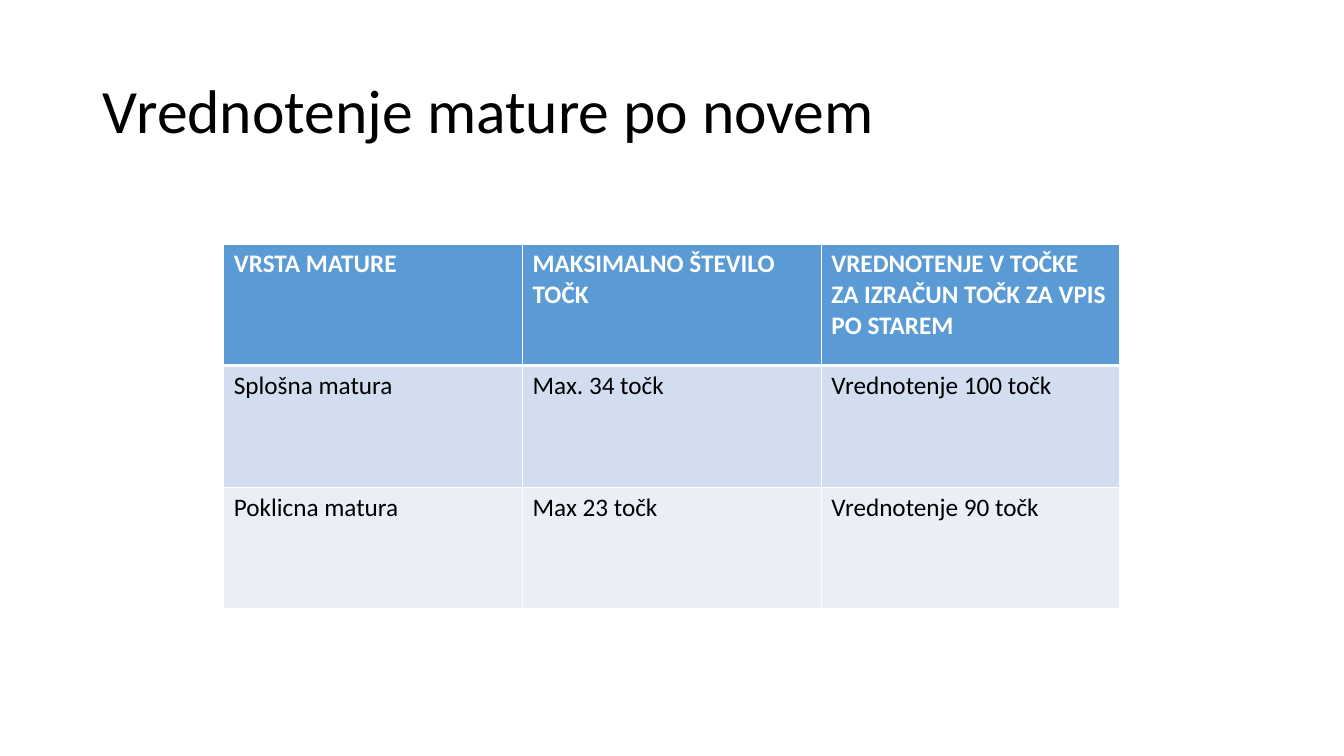
from dataclasses import dataclass

from lxml.etree import SubElement as Sub
from pptx import Presentation
from pptx.dml.color import RGBColor as RGB
from pptx.enum.text import MSO_ANCHOR as Anchor, PP_ALIGN as Align
from pptx.oxml.ns import qn
from pptx.util import Inches, Pt


@dataclass(frozen=True)
class Theme:
    font: str = "Calibri"
    ink: str = "000000"
    white: str = "FFFFFF"
    head: str = "5B9BD5"
    bands: tuple = ("D2DEEF", "EAEFF7")
    title: int = 44
    body: int = 18
    thin: int = 1
    thick: int = 3


THEME = Theme()

ROWS = [
    ("VRSTA MATURE", "MAKSIMALNO ŠTEVILO TOČK",
     "VREDNOTENJE V TOČKE ZA IZRAČUN TOČK ZA VPIS PO STAREM"),
    ("Splošna matura", "Max. 34 točk", "Vrednotenje 100 točk"),
    ("Poklicna matura", "Max 23 točk", "Vrednotenje 90 točk"),
]


def add_run(para, text, size, color, bold=False):
    run = para.add_run()
    run.text = text
    font = run.font
    font.name, font.size, font.bold = THEME.font, Pt(size), bold
    font.color.rgb = RGB.from_string(color)


def add_title(slide, text):
    title = slide.shapes.title
    title.left, title.top = Inches(0.92), Inches(0.4)
    title.width, title.height = Inches(11.5), Inches(1.45)
    frame = title.text_frame
    frame.word_wrap = True
    frame.vertical_anchor = Anchor.MIDDLE
    para = frame.paragraphs[0]
    para.alignment = Align.LEFT
    para.line_spacing = 0.9
    add_run(para, text, THEME.title, THEME.ink)


def add_edge(cell, side, width):
    props = cell._tc.get_or_add_tcPr()
    line = Sub(props, qn(f"a:ln{side}"), w=str(Pt(width)))
    fill = Sub(line, qn("a:solidFill"))
    Sub(fill, qn("a:srgbClr"), val=THEME.white)


def style_cell(cell, text, row):
    is_head = row == 0
    # Edges come before the fill in the cell properties
    heavy = {"T": row == 1, "B": is_head}
    for side in "LRTB":
        add_edge(cell, side, THEME.thick if heavy.get(side) else THEME.thin)
    color = THEME.head if is_head else THEME.bands[(row - 1) % 2]
    cell.fill.solid()
    cell.fill.fore_color.rgb = RGB.from_string(color)
    add_run(cell.text_frame.paragraphs[0], text, THEME.body,
            THEME.white if is_head else THEME.ink, is_head)


def add_grid(slide, rows):
    frame = slide.shapes.add_table(
        len(rows), len(rows[0]),
        Inches(2.22), Inches(2.42), Inches(8.89), Inches(3.62))
    for i, row in enumerate(rows):
        for j, text in enumerate(row):
            style_cell(frame.table.cell(i, j), text, i)


def main():
    deck = Presentation()
    deck.slide_width, deck.slide_height = Inches(13.33), Inches(7.5)
    # Title Only layout
    slide = deck.slides.add_slide(deck.slide_layouts[5])
    add_title(slide, "Vrednotenje mature po novem")
    add_grid(slide, ROWS)
    deck.save("out.pptx")


if __name__ == "__main__":
    main()
